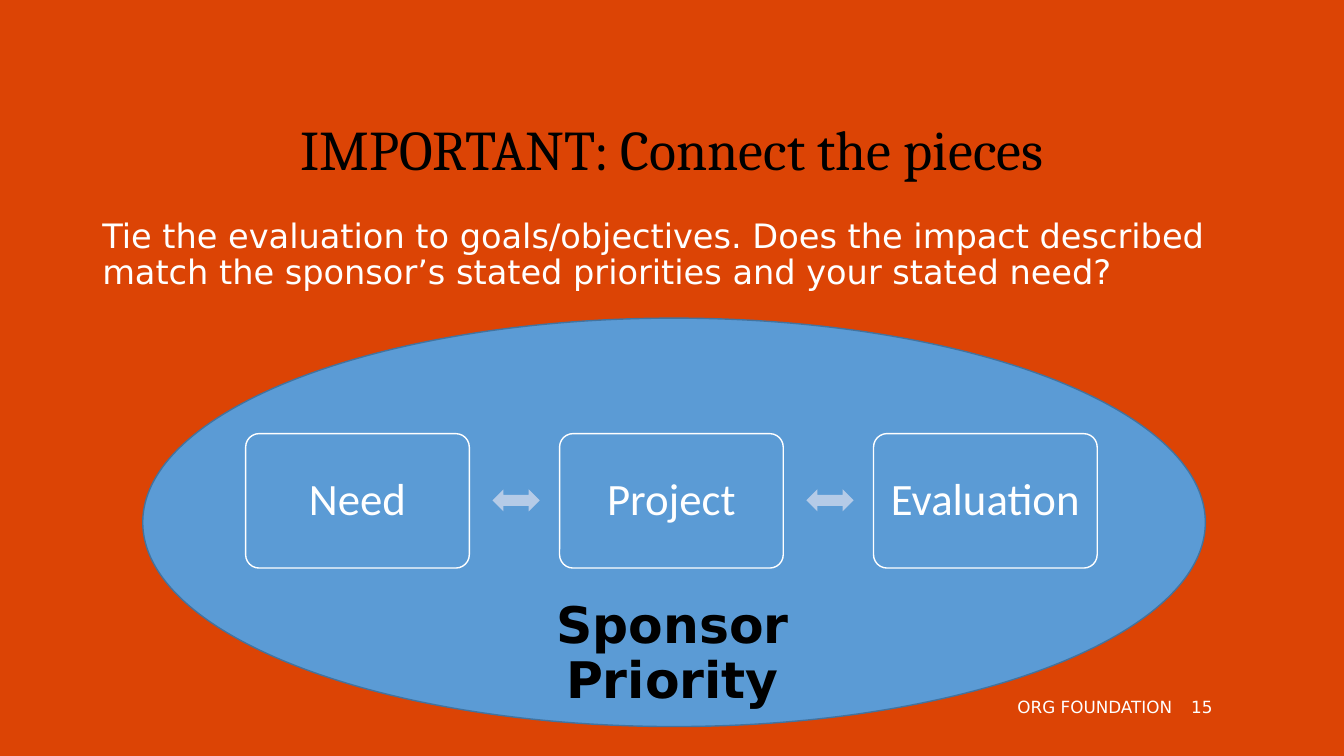
from pptx import Presentation
from pptx.dml.color import RGBColor
from pptx.enum.shapes import MSO_SHAPE as SHAPE
from pptx.enum.text import MSO_ANCHOR as ANCHOR, MSO_AUTO_SIZE as AUTO, PP_ALIGN as ALIGN
from pptx.util import Emu, Pt

ORANGE = RGBColor(0xDC, 0x44, 0x05)
BLUE = RGBColor(0x5B, 0x9B, 0xD5)
DARK_BLUE = RGBColor(0x43, 0x73, 0x9E)
PALE_BLUE = RGBColor(0xB5, 0xCB, 0xE7)
WHITE = RGBColor(0xFF, 0xFF, 0xFF)
BLACK = RGBColor(0, 0, 0)
PX = 9525


def px(*lengths):
    """Turn pixel lengths into EMU."""
    return [Emu(n * PX) for n in lengths]


class SlideBuilder:
    """Hold the style and the current slide."""

    sans, serif, card_font = "DejaVu Sans", "Cambria", "Calibri"

    def __init__(self, prs):
        """Add a title-only slide with the orange background."""
        self.s = prs.slides.add_slide(prs.slide_layouts[5])
        fill = self.s.background.fill
        fill.solid()
        fill.fore_color.rgb = ORANGE

    def set_text(self, sp, text, size, font, color=WHITE, align=ALIGN.LEFT,
                 anchor=ANCHOR.TOP, spacing=1.0, bold=False):
        """Fill a shape with one styled paragraph."""
        tf = sp.text_frame
        tf.word_wrap = True
        tf.auto_size = AUTO.NONE
        tf.vertical_anchor = anchor
        p = tf.paragraphs[0]
        p.text = text
        p.alignment = align
        p.line_spacing = spacing
        p.font.size = Pt(size)
        p.font.name = font
        p.font.bold = bold
        p.font.color.rgb = color

    def title(self, box, text):
        """Place and format the title placeholder."""
        sp = self.s.shapes.title
        sp.left, sp.top, sp.width, sp.height = px(*box)
        self.set_text(sp, text, 40, self.serif, BLACK, ALIGN.CENTER)

    def text(self, box, text, size, **style):
        """Add a text box."""
        sp = self.s.shapes.add_textbox(*px(*box))
        self.set_text(sp, text, size, self.sans, **style)

    def shape(self, kind, box, fill, line=None):
        """Add a filled preset shape."""
        sp = self.s.shapes.add_shape(kind, *px(*box))
        sp.shadow.inherit = False
        sp.fill.solid()
        sp.fill.fore_color.rgb = fill
        if line is None:
            sp.line.fill.background()
        else:
            sp.line.color.rgb = line
            sp.line.width = Pt(1)
        return sp

    def card(self, box, text):
        """Add a rounded card with a centred label."""
        sp = self.shape(SHAPE.ROUNDED_RECTANGLE, box, BLUE, WHITE)
        sp.adjustments[0] = 0.1
        tf = sp.text_frame
        tf.margin_left, tf.margin_right = px(9, 9)
        self.set_text(sp, text, 32, self.card_font, align=ALIGN.CENTER,
                      anchor=ANCHOR.MIDDLE, spacing=0.9)


def main():
    """Build and save the slide."""
    prs = Presentation()
    prs.slide_width, prs.slide_height = px(1280, 720)
    b = SlideBuilder(prs)
    b.text((88, 204, 1104, 87),
           "Tie the evaluation to goals/objectives. Does the impact described "
           "match the sponsor’s stated priorities and your stated need?",
           24, spacing=0.9)
    b.title((88, 104, 1104, 73), "IMPORTANT: Connect the pieces")
    b.shape(SHAPE.OVAL, (136, 303, 1012, 389), BLUE, DARK_BLUE)

    labels = ["Need", "Project", "Evaluation"]
    left, pitch = 234, 299
    for i, label in enumerate(labels):
        x = left + i * pitch
        b.card((x, 413, 213, 128), label)
        if i < len(labels) - 1:
            b.shape(SHAPE.LEFT_RIGHT_ARROW, (x + 235, 466, 45, 21), PALE_BLUE)

    b.text((435, 567, 411, 96), "Sponsor Priority", 36, color=BLACK,
           align=ALIGN.CENTER, spacing=0.9, bold=True)
    b.text((424, 654, 702, 38), "ORG FOUNDATION", 12, align=ALIGN.RIGHT,
           anchor=ANCHOR.MIDDLE)
    b.text((1125, 654, 66, 38), "15", 12, anchor=ANCHOR.MIDDLE)
    prs.save("out.pptx")


if __name__ == "__main__":
    main()
